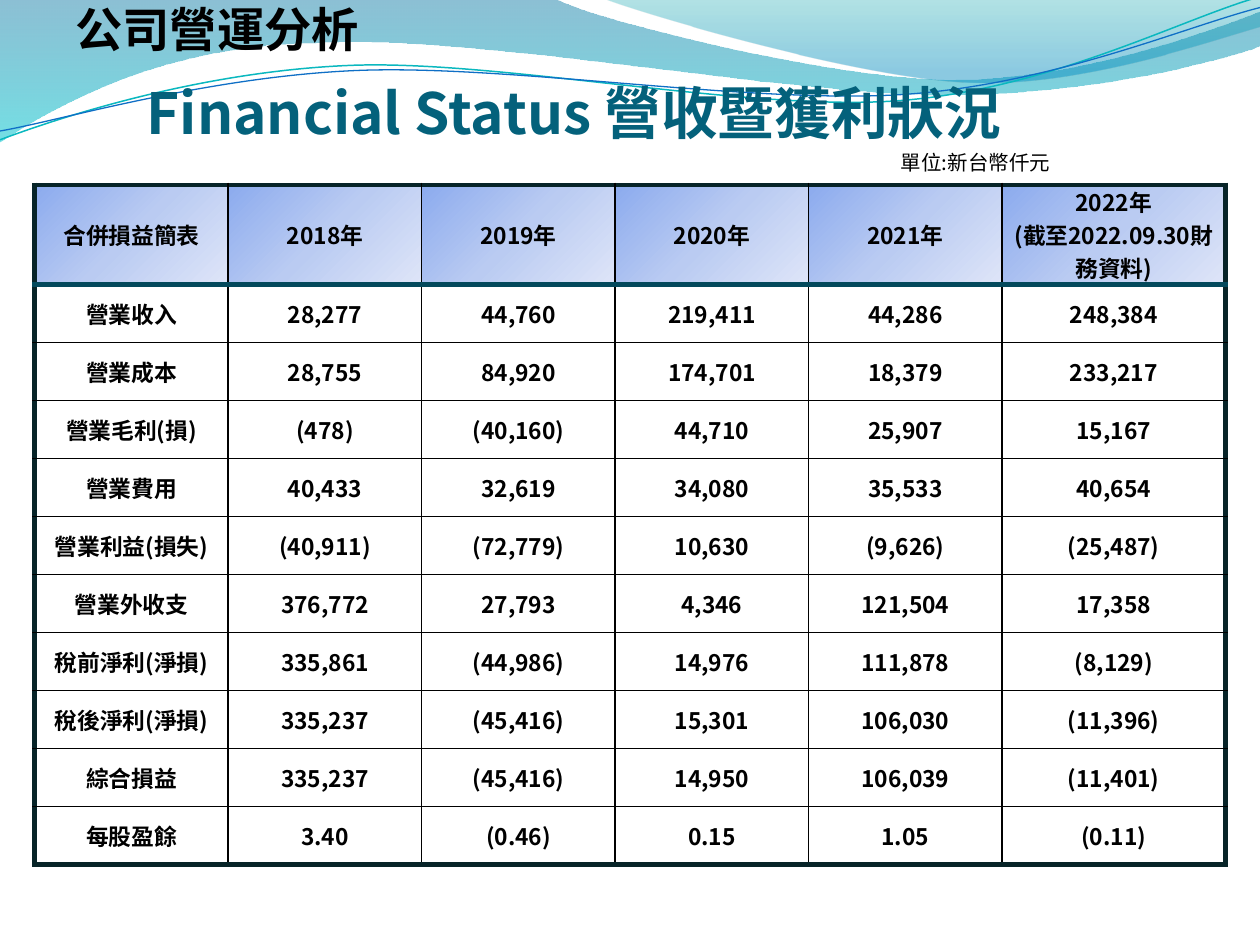
from itertools import chain
from lxml.etree import SubElement
from pptx import Presentation
from pptx.dml.color import RGBColor as RGB
from pptx.enum.text import MSO_ANCHOR as Anchor, PP_ALIGN as Align
from pptx.oxml.ns import qn
from pptx.util import Cm, Pt

FONT = "Noto Sans CJK SC"
BLACK = RGB(0x00, 0x00, 0x00)
TITLE_TEAL = RGB(0x04, 0x61, 0x7B)
FRAME_DARK = RGB(0x07, 0x24, 0x28)
HEADER_RULE = RGB(0x03, 0x49, 0x5C)
LINE_TEAL = RGB(0x0A, 0xB8, 0xBF)
LINE_BLUE = RGB(0x0F, 0x6F, 0xC6)

# Gradient stops: position %, colour, opacity %
LEFT_WAVE_STOPS = [(0, RGB(0x00, 0x74, 0xA1), 45), (100, RGB(0x00, 0xC6, 0xCF), 55)]
RIGHT_WAVE_STOPS = [(0, RGB(0x00, 0xA1, 0xA9), 30), (80, RGB(0x00, 0x8B, 0xBF), 45)]
HEADER_STOPS = [(0, RGB(0x8C, 0xAB, 0xEE), 100), (50, RGB(0xBA, 0xCB, 0xF2), 100),
                (100, RGB(0xDE, 0xE5, 0xF8), 100)]

# Waves in thousandths of the page width: two numbers make a line, six a Bézier curve
LEFT_WAVE = [(0, -1), (440, -1),
             (476, 17, 664, 63, 758, 63), (853, 63, 958, 26, 1000, 9),
             (1001, 36),
             (983, 44, 870, 76, 746, 75), (622, 75, 382, 28, 257, 34),
             (129, 35, 46, 83, -1, 113)]
RIGHT_WAVE = [(479, -1), (509, 11, 682, 62, 769, 65), (856, 69, 961, 32, 1000, 21), (1000, 0)]
TEAL_CURVE = [(0, 111), (48, 93, 158, 57, 277, 52),
              (395, 47, 593, 89, 713, 80), (833, 71, 938, 15, 998, -2)]
BLUE_CURVE = [(0, 104), (47, 96, 164, 61, 283, 56),
              (403, 51, 597, 83, 717, 75), (836, 67, 941, 21, 1000, 6)]

# Title lines: text, indent in cm, space before, font values
TITLE_LINES = [
    ("公司營運分析", 0, 0, {"size": Pt(27), "bold": True, "color": BLACK}),
    ("Financial Status 營收暨獲利狀況", 1.44, 11.6,
     {"size": Pt(32.4), "bold": True, "color": TITLE_TEAL}),
    ("單位:新台幣仟元", 16.64, 2.7, {"size": Pt(11.7), "bold": False, "color": BLACK}),
]
CELL_FONT = {"size": Pt(13), "bold": True, "color": BLACK}

INCOME_ROWS = [
    ["合併損益簡表", "2018年", "2019年", "2020年", "2021年", "2022年\n(截至2022.09.30財務資料)"],
    ["營業收入", "28,277", "44,760", "219,411", "44,286", "248,384"],
    ["營業成本", "28,755", "84,920", "174,701", "18,379", "233,217"],
    ["營業毛利(損)", "(478)", "(40,160)", "44,710", "25,907", "15,167"],
    ["營業費用", "40,433", "32,619", "34,080", "35,533", "40,654"],
    ["營業利益(損失)", "(40,911)", "(72,779)", "10,630", "(9,626)", "(25,487)"],
    ["營業外收支", "376,772", "27,793", "4,346", "121,504", "17,358"],
    ["稅前淨利(淨損)", "335,861", "(44,986)", "14,976", "111,878", "(8,129)"],
    ["稅後淨利(淨損)", "335,237", "(45,416)", "15,301", "106,030", "(11,396)"],
    ["綜合損益", "335,237", "(45,416)", "14,950", "106,039", "(11,401)"],
    ["每股盈餘", "3.40", "(0.46)", "0.15", "1.05", "(0.11)"],
]


def set_font(span, values):
    """Apply font values, with the same face for Latin and East Asian text."""
    font = span.font
    font.name = FONT
    for name, value in values.items():
        if name == "color":
            font.color.rgb = value
        else:
            setattr(font, name, value)
    latin = span._r.get_or_add_rPr().find(qn("a:latin"))
    east_asian = latin.makeelement(qn("a:ea"), {"typeface": FONT})
    latin.addnext(east_asian)


def add_gradient(parent, stops, angle):
    gradient = SubElement(parent, qn("a:gradFill"), rotWithShape="1")
    stop_list = SubElement(gradient, qn("a:gsLst"))
    for position, color, opacity in stops:
        stop = SubElement(stop_list, qn("a:gs"), pos=str(position * 1000))
        shade = SubElement(stop, qn("a:srgbClr"), val=str(color))
        if opacity < 100:
            SubElement(shade, qn("a:alpha"), val=str(opacity * 1000))
    SubElement(gradient, qn("a:lin"), ang=str(angle * 60000), scaled="0")
    return gradient


def bend_segments(shape, segments):
    """Join each three straight steps of a six-number segment into one Bézier curve."""
    steps = iter(list(shape._element.iter(qn("a:lnTo"))))
    for segment in segments[1:]:
        first = next(steps)
        if len(segment) == 6:
            curve = first.makeelement(qn("a:cubicBezTo"))
            first.addprevious(curve)
            for step in (first, next(steps), next(steps)):
                curve.append(step[0])
                step.getparent().remove(step)


def add_outline(page, left, top, width, segments, close):
    numbers = list(chain.from_iterable(segments))
    points = list(zip(numbers[::2], numbers[1::2]))
    builder = page.shapes.build_freeform(*points[0], scale=width / 1000)
    builder.add_line_segments(points[1:], close=close)
    shape = builder.convert_to_shape(left, top)
    bend_segments(shape, segments)
    shape.shadow.inherit = False
    shape.fill.background()
    return shape


def add_waves(page, left, top, width):
    for segments, stops in ((LEFT_WAVE, LEFT_WAVE_STOPS), (RIGHT_WAVE, RIGHT_WAVE_STOPS)):
        wave = add_outline(page, left, top, width, segments, True)
        wave.line.fill.background()
        properties = wave._element.spPr
        properties.replace(properties.find(qn("a:noFill")),
                           add_gradient(properties, stops, 90))
    for segments, color, weight in ((TEAL_CURVE, LINE_TEAL, 0.85), (BLUE_CURVE, LINE_BLUE, 0.75)):
        curve = add_outline(page, left, top, width, segments, False)
        curve.line.color.rgb = color
        curve.line.width = Pt(weight)


def add_title(page, left, top, width, height):
    frame = page.shapes.add_textbox(left, top, width, height).text_frame
    frame.word_wrap = True
    frame.vertical_anchor = Anchor.MIDDLE
    for index, (text, indent, space, values) in enumerate(TITLE_LINES):
        para = frame.add_paragraph() if index else frame.paragraphs[0]
        if index:
            para.space_before = Pt(space)
            para._p.get_or_add_pPr().set("marL", str(Cm(indent)))
        span = para.add_run()
        span.text = text
        set_font(span, values)


def add_borders(cell, row, column, last_row, last_column):
    thin = (BLACK, 1)
    frame = (FRAME_DARK, 3)
    rule = (HEADER_RULE, 3)
    borders = {
        "a:lnL": frame if column == 0 else thin,
        "a:lnR": frame if column == last_column else thin,
        "a:lnT": {0: frame, 1: rule}.get(row, thin),
        "a:lnB": {0: rule, last_row: frame}.get(row, thin),
    }
    properties = cell._tc.get_or_add_tcPr()
    for tag, (color, weight) in borders.items():
        line = SubElement(properties, qn(tag), w=str(Pt(weight)))
        SubElement(SubElement(line, qn("a:solidFill")), qn("a:srgbClr"), val=str(color))


def fill_cell(cell, text):
    margins = {"margin_left": Cm(0.13), "margin_right": Cm(0.13),
               "margin_top": 0, "margin_bottom": 0, "vertical_anchor": Anchor.MIDDLE}
    for name, value in margins.items():
        setattr(cell, name, value)
    cell.text = text
    for para in cell.text_frame.paragraphs:
        para.alignment = Align.CENTER
        for span in para.runs:
            set_font(span, CELL_FONT)


def add_income_table(page, left, top, width, height):
    row_count, column_count = len(INCOME_ROWS), len(INCOME_ROWS[0])
    table = page.shapes.add_table(row_count, column_count, left, top, width, height).table
    table.first_row = table.horz_banding = False
    column_width, row_height = Cm(3.9), Cm(1.17)
    for column in table.columns:
        column.width = column_width
    table.columns[column_count - 1].width = width - column_width * (column_count - 1)
    for row in table.rows:
        row.height = row_height
    table.rows[0].height = height - row_height * (row_count - 1)
    for row, texts in enumerate(INCOME_ROWS):
        for column, text in enumerate(texts):
            cell = table.cell(row, column)
            fill_cell(cell, text)
            add_borders(cell, row, column, row_count - 1, column_count - 1)
            if row == 0:
                add_gradient(cell._tc.tcPr, HEADER_STOPS, 45)
            else:
                cell.fill.background()


def main():
    deck = Presentation()
    deck.slide_width, deck.slide_height = Cm(25.4), Cm(19.05)
    page = deck.slides.add_slide(deck.slide_layouts[6])
    add_waves(page, 0, 0, deck.slide_width)
    add_income_table(page, Cm(0.7), Cm(3.73), Cm(24), Cm(13.7))
    add_title(page, Cm(1.27), 0, Cm(23.62), Cm(3.53))
    deck.save("out.pptx")


if __name__ == "__main__":
    main()
